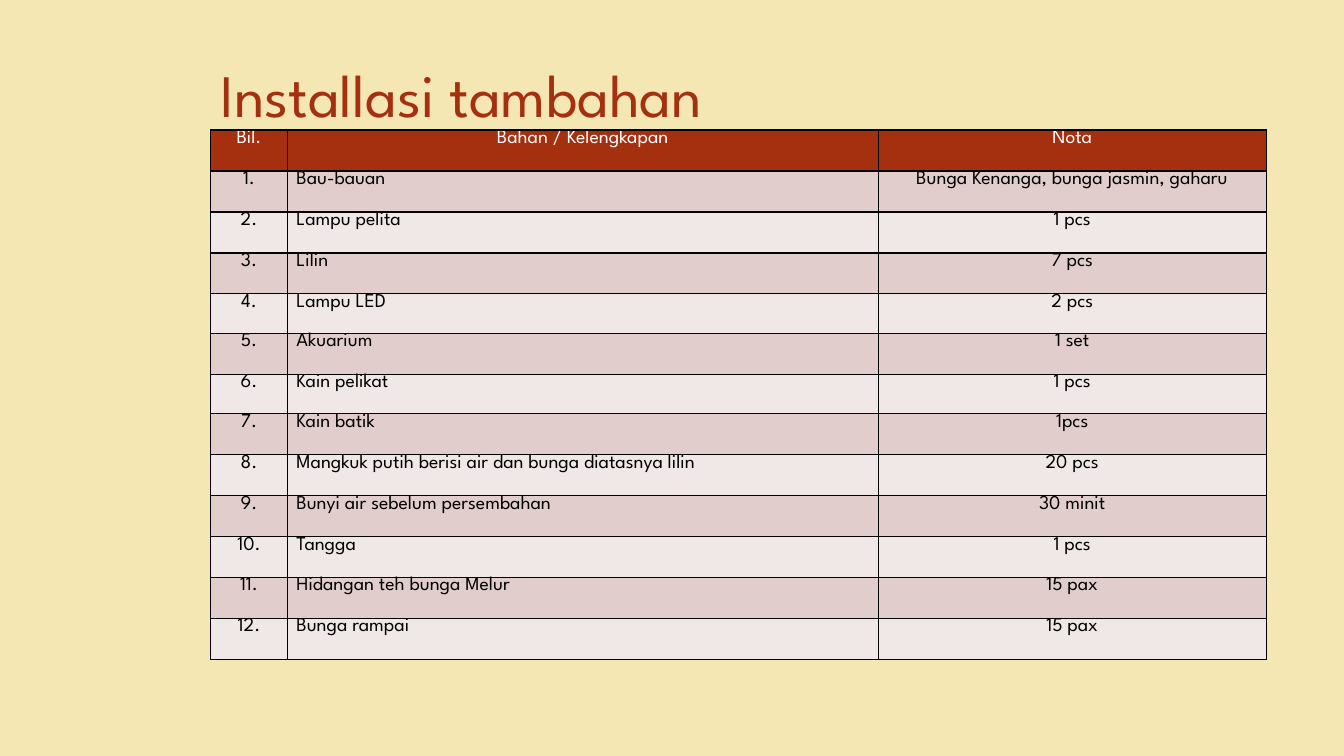
from dataclasses import dataclass
from lxml.etree import SubElement
from pptx import Presentation
from pptx.dml.color import RGBColor as Rgb
from pptx.enum.text import MSO_ANCHOR as Anchor, PP_ALIGN as Align
from pptx.oxml.ns import qn
from pptx.util import Inches, Pt


@dataclass(frozen=True)
class Theme:
    face: str = "League Spartan"
    paper: str = "F5E7B4"
    rust: str = "A5300F"
    white: str = "FFFFFF"
    black: str = "000000"
    bands: tuple = ("F0E8E7", "E1CDCC")
    title: int = 43
    body: int = 14
    rule: int = 1


LOOK = Theme()
WIDE, HIGH = 13.33, 7.5
HEAD = ("Bil.", "Bahan / Kelengkapan", "Nota")
ITEMS = (
    ("Bau-bauan", "Bunga Kenanga, bunga jasmin, gaharu"),
    ("Lampu pelita", "1 pcs"),
    ("Lilin", "7 pcs"),
    ("Lampu LED", "2 pcs"),
    ("Akuarium", "1 set"),
    ("Kain pelikat", "1 pcs"),
    ("Kain batik", "1pcs"),
    ("Mangkuk putih berisi air dan bunga diatasnya lilin", "20 pcs"),
    ("Bunyi air sebelum persembahan", "30 minit"),
    ("Tangga", "1 pcs"),
    ("Hidangan teh bunga Melur", "15 pax"),
    ("Bunga rampai", "15 pax"),
)
COLS = (0.76, 5.86, 3.85)
SHORT = (4, 6)  # rows a little lower than the rest


def setup(item, values):
    for name, value in values.items():
        setattr(item, name, value)


def write(frame, text, size, color, align=Align.LEFT):
    par = frame.paragraphs[0]
    par.alignment = align
    run = par.add_run()
    run.text = text
    setup(run.font, {"name": LOOK.face, "size": Pt(size), "bold": False})
    run.font.color.rgb = Rgb.from_string(color)


def border(cell):
    props = cell._tc.get_or_add_tcPr()
    for spot, side in enumerate(("lnL", "lnR", "lnT", "lnB")):
        line = SubElement(props, qn(f"a:{side}"), w=str(Pt(LOOK.rule)))
        fill = SubElement(line, qn("a:solidFill"))
        SubElement(fill, qn("a:srgbClr"), val=LOOK.black)
        props.insert(spot, line)  # borders come before the fill


def heading(slide, box, text):
    frame = slide.shapes.add_textbox(*map(Inches, box)).text_frame
    setup(frame, {"word_wrap": True, "vertical_anchor": Anchor.MIDDLE})
    write(frame, text, LOOK.title, LOOK.rust)


def listing(slide, box, rows):
    left, top, wide, high = box
    table = slide.shapes.add_table(
        len(rows), len(COLS), *map(Inches, box)).table

    # Column and row shares of the box
    for col, part in zip(table.columns, COLS):
        col.width = Inches(wide * part / sum(COLS))
    parts = [0.96 if num in SHORT else 1 for num in range(len(rows))]
    for row, part in zip(table.rows, parts):
        row.height = Inches(high * part / sum(parts))

    # Cells
    for num, row in enumerate(rows):
        back = LOOK.bands[num % 2] if num else LOOK.rust
        ink = LOOK.black if num else LOOK.white
        for col, text in enumerate(row):
            cell = table.cell(num, col)
            setup(cell, {"margin_left": Inches(0.09),
                         "margin_right": Inches(0.09),
                         "margin_top": 0, "margin_bottom": 0,
                         "vertical_anchor": Anchor.TOP})
            cell.fill.solid()
            cell.fill.fore_color.rgb = Rgb.from_string(back)
            border(cell)
            align = Align.LEFT if num and col == 1 else Align.CENTER
            write(cell.text_frame, text, LOOK.body, ink, align)


def main():
    deck = Presentation()
    setup(deck, {"slide_width": Inches(WIDE), "slide_height": Inches(HIGH)})
    slide = deck.slides.add_slide(deck.slide_layouts[6])
    fill = slide.background.fill
    fill.solid()
    fill.fore_color.rgb = Rgb.from_string(LOOK.paper)

    # Title above the table, on one left edge
    left = 2.09
    heading(slide, (left, HIGH * 0.04, WIDE * 0.82, 1.25),
            "Installasi tambahan")
    rows = [HEAD] + [(f"{num}.", *item) for num, item in enumerate(ITEMS, 1)]
    listing(slide, (left, 1.29, sum(COLS), HIGH * 0.7), rows)
    deck.save("out.pptx")


if __name__ == "__main__":
    main()
